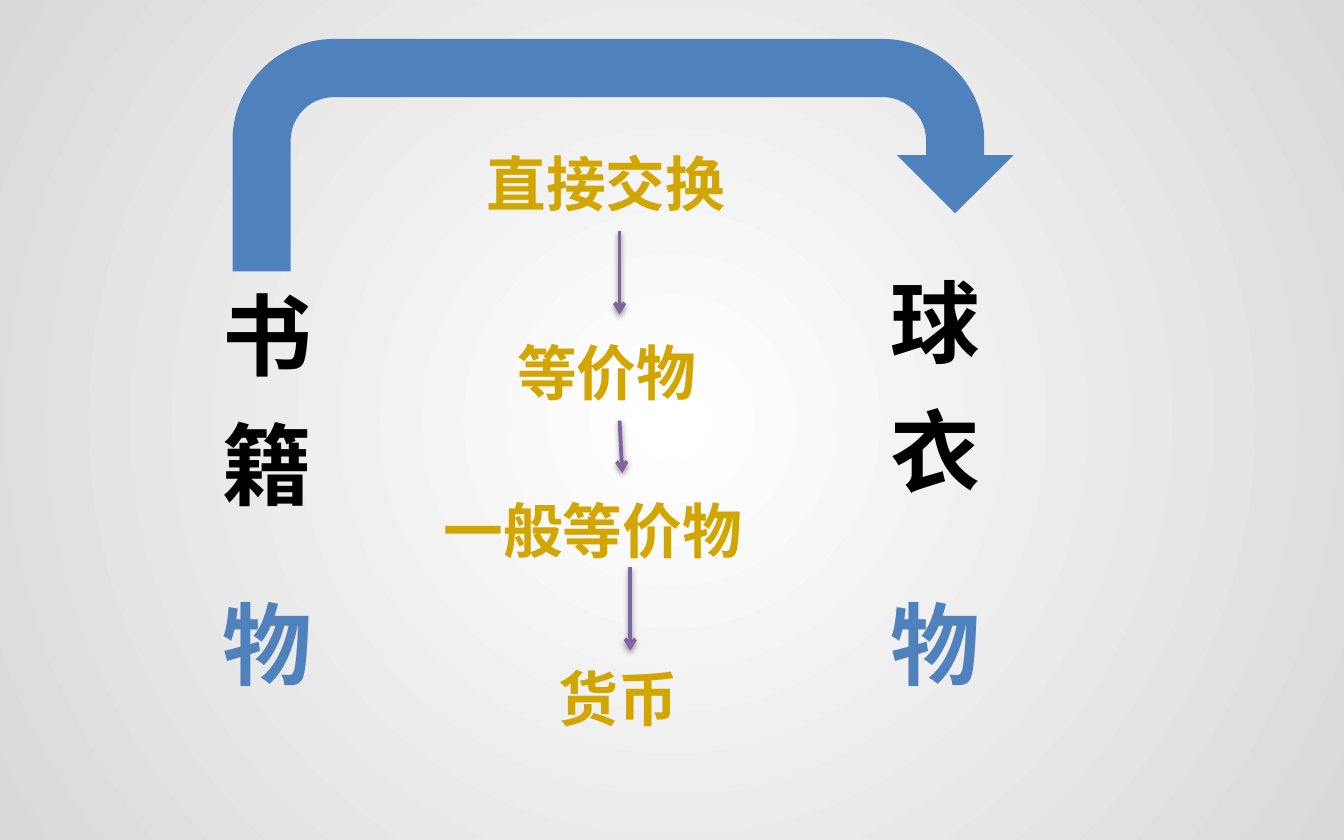
from lxml import etree
from pptx import Presentation
from pptx.dml.color import RGBColor
from pptx.enum.shapes import MSO_CONNECTOR, MSO_SHAPE
from pptx.enum.text import MSO_AUTO_SIZE
from pptx.oxml import parse_xml
from pptx.oxml.ns import qn
from pptx.util import Inches, Pt

STRAIGHT = MSO_CONNECTOR.STRAIGHT
UTURN = MSO_SHAPE.U_TURN_ARROW
GROW = MSO_AUTO_SIZE.SHAPE_TO_FIT_TEXT

WHITE = RGBColor(0xFF, 0xFF, 0xFF)
GREY = RGBColor(0xD9, 0xD9, 0xD9)
BLACK = RGBColor(0, 0, 0)
BLUE = RGBColor(0x4F, 0x81, 0xBD)
GOLD = RGBColor(0xD2, 0xA5, 0x00)
PURPLE = RGBColor(0x80, 0x64, 0xA2)

FONT = "Noto Sans CJK SC"
NS = 'xmlns:a="http://schemas.openxmlformats.org/drawingml/2006/main"'
RADIAL = (f'<a:path {NS} path="circle">'
          '<a:fillToRect l="50000" t="50000" r="50000" b="50000"/></a:path>')
SHADOW = (f'<a:effectLst {NS}><a:outerShdw blurRad="{Pt(3.1)}" dist="{Pt(1.6)}" '
          'dir="5400000" rotWithShape="0"><a:srgbClr val="000000">'
          '<a:alpha val="38000"/></a:srgbClr></a:outerShdw></a:effectLst>')


def set_background(s):
    fill = s.background.fill
    fill.gradient()
    for stop, position, color in zip(fill.gradient_stops, (0, 1), (WHITE, GREY)):
        stop.position = position
        stop.color.rgb = color
    grad = s.background._cSld.find(".//" + qn("a:gradFill"))
    grad.replace(grad.find(qn("a:lin")), parse_xml(RADIAL))


def add_text(s, box, lines, size, color):
    tf = s.shapes.add_textbox(*map(Inches, box)).text_frame
    tf.word_wrap = True
    tf.auto_size = GROW
    for i, line in enumerate(lines):
        p = tf.paragraphs[0] if i == 0 else tf.add_paragraph()
        p.line_spacing = 1.2
        r = p.add_run()
        r.text = line
        r.font.size = Pt(size)
        r.font.bold = True
        r.font.name = FONT
        r.font.color.rgb = color
        ea = etree.SubElement(r.font._element, qn("a:ea"))
        ea.set("typeface", FONT)


def add_arrow(s, x1, y1, x2, y2):
    c = s.shapes.add_connector(STRAIGHT, *map(Inches, (x1, y1, x2, y2)))
    c.line.color.rgb = PURPLE
    c.line.width = Pt(2)
    tail = etree.SubElement(c.line._get_or_add_ln(), qn("a:tailEnd"))
    tail.set("type", "arrow")
    c._element.spPr.append(parse_xml(SHADOW))


def add_goods(s, box, name):
    left, top, width, height = box
    add_text(s, (left, 4.17, 1.37, 1.06), ["物"], 48, BLUE)
    add_text(s, (left, top, width, height), name, 48, BLACK)


def add_stages(s, top, stages, arrows):
    for label, left, offset, width in stages:
        add_text(s, (left, top + offset, width, 0.74), [label], 32, GOLD)
    for x1, start, x2, end in arrows:
        add_arrow(s, x1, top + start, x2, top + end)


def add_exchange_arrow(s, box):
    sp = s.shapes.add_shape(UTURN, *map(Inches, box))
    sp.shadow.inherit = False
    sp.fill.solid()
    sp.fill.fore_color.rgb = BLUE
    sp.line.fill.background()


def main():
    prs = Presentation()
    prs.slide_width, prs.slide_height = Inches(10), Inches(6.25)
    s = prs.slides.add_slide(prs.slide_layouts[6])
    set_background(s)
    add_goods(s, (1.56, 1.87, 1.98, 2.98), "书籍")
    add_goods(s, (6.53, 1.78, 2.12, 2.02), "球衣")
    add_stages(s, 0.94,
               [("直接交换", 3.52, 0, 2.27), ("等价物", 3.75, 1.4, 2.27),
                ("一般等价物", 3.2, 2.58, 2.85), ("货币", 4.06, 3.83, 1.28)],
               [(4.61, 0.78, 4.61, 1.4), (4.61, 2.19, 4.63, 2.58),
                (4.69, 3.28, 4.69, 3.9)])
    add_exchange_arrow(s, (1.73, 0.29, 5.81, 1.73))
    prs.save("out.pptx")


if __name__ == "__main__":
    main()
